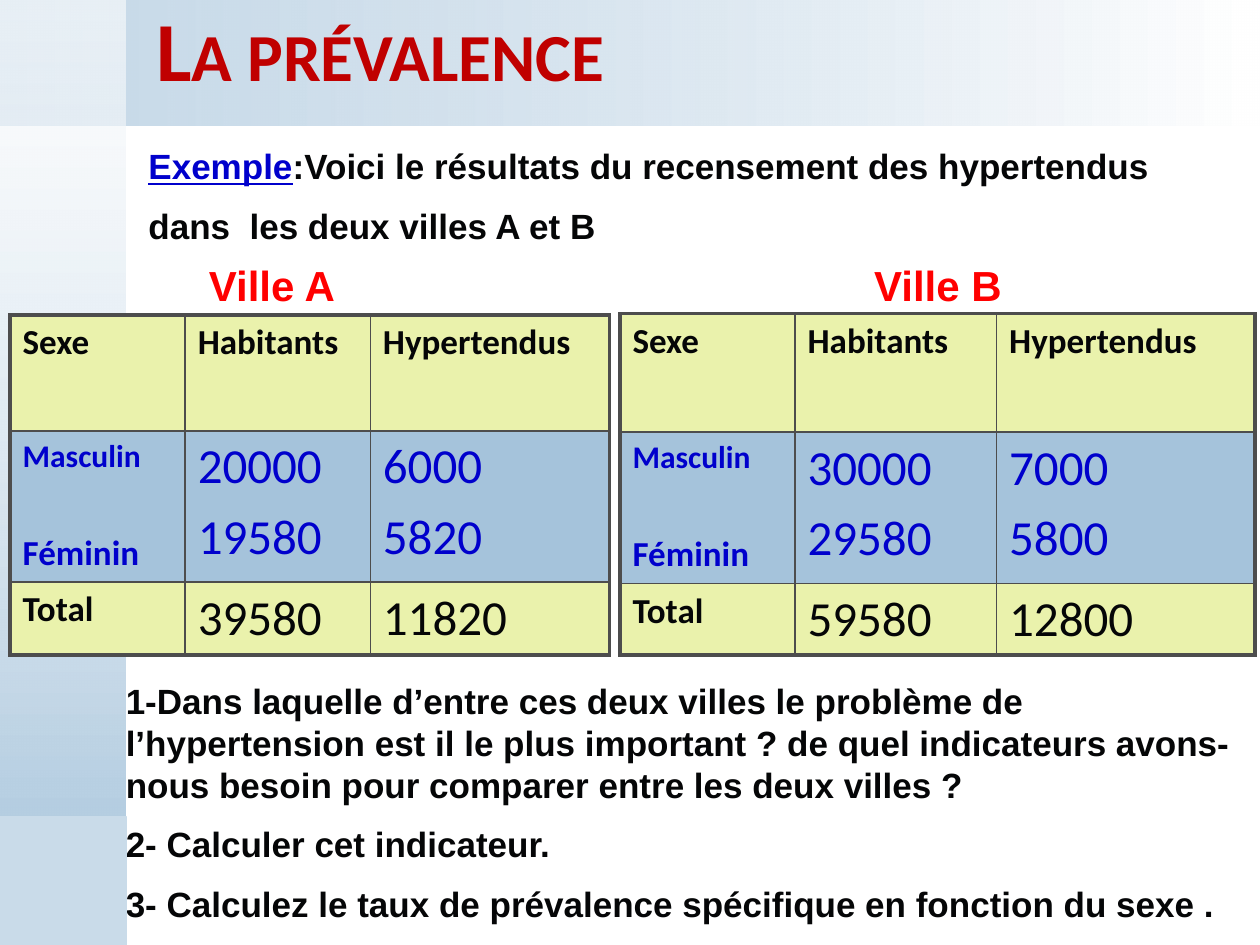
from dataclasses import dataclass

from lxml import etree
from pptx import Presentation
from pptx.dml.color import RGBColor
from pptx.enum.shapes import MSO_SHAPE
from pptx.enum.text import MSO_ANCHOR
from pptx.oxml.ns import qn
from pptx.util import Inches, Pt

RECT = MSO_SHAPE.RECTANGLE
MIDDLE = MSO_ANCHOR.MIDDLE
TOP = MSO_ANCHOR.TOP
BLANK = 6


@dataclass(frozen=True)
class Theme:
    """Colours, fonts and type sizes."""
    head: str = "Calibri"
    text: str = "Arial"
    ink: str = "050607"
    blue: str = "0000CC"
    red: str = "FF0000"
    dark: str = "C00000"
    sky: str = "A5C3DB"
    pale: str = "C9DBE9"
    lime: str = "EAF2AC"
    white: str = "FFFFFF"
    grid: str = "4D4D4D"
    title: int = 48
    figure: int = 28
    town: int = 24
    body: int = 20
    small: int = 18
    thin: float = 1
    thick: float = 2.25


T = Theme()


def rgb(code):
    """Turn a hex code into a colour."""
    return RGBColor.from_string(code)


def style(font, face, size, color, bold=True):
    """Set the look of a font."""
    font.name, font.size, font.bold = face, Pt(size), bold
    font.color.rgb = rgb(color)


def add_text(slide, box, lines, face, size, color, gap=0, anchor=TOP):
    """Add a text box with one paragraph per line."""
    frame = slide.shapes.add_textbox(*map(Inches, box)).text_frame
    frame.word_wrap = True
    frame.vertical_anchor = anchor
    for i, line in enumerate(lines):
        para = frame.paragraphs[0] if i == 0 else frame.add_paragraph()
        para.add_run().text = line
        if i:
            para.space_before = Pt(gap)
        style(para.font, face, size, color)
    return frame


def add_rect(slide, box):
    """Add a plain rectangle without shadow or outline."""
    shape = slide.shapes.add_shape(RECT, *map(Inches, box))
    shape.shadow.inherit = False
    shape.line.fill.background()
    return shape


def add_fade(slide, box, start, end, alpha, angle):
    """Add a band that fades from a see-through colour to a solid one."""
    fill = add_rect(slide, box).fill
    fill.gradient()
    fill.gradient_angle = angle
    for stop, color in zip(fill.gradient_stops, (start, end)):
        stop.color.rgb = rgb(color)
    tint = next(fill._xPr.iter(qn("a:srgbClr")))
    etree.SubElement(tint, qn("a:alpha"), val=str(alpha * 1000))


def set_edges(cell, row, col, last):
    """Draw the cell borders, thick on the outside of the table."""
    outer = {"L": col == 0, "R": col == last, "T": row == 0, "B": row == last}
    props = cell._tc.get_or_add_tcPr()
    for i, (side, edge) in enumerate(outer.items()):
        width = Pt(T.thick if edge else T.thin)
        line = etree.Element(qn(f"a:ln{side}"), w=str(width))
        fill = etree.SubElement(line, qn("a:solidFill"))
        etree.SubElement(fill, qn("a:srgbClr"), val=T.grid)
        props.insert(i, line)


def fill_cell(cell, row, col, text):
    """Write the lines of a cell and colour it by row and column."""
    mid = row == 1
    cell.fill.solid()
    cell.fill.fore_color.rgb = rgb(T.sky if mid else T.lime)
    label = row == 0 or col == 0
    cell.text = text
    for i, para in enumerate(cell.text_frame.paragraphs):
        size = T.body if label else T.figure
        if mid and label and i == 0:
            size = T.small
        if i:
            para.space_before = Pt(32 if label else 6)
        style(para.font, T.head, size, T.blue if mid else T.ink, label)


def add_grid(slide, left, top, cols, rows, data):
    """Add the census table of one town."""
    frame = slide.shapes.add_table(len(rows), len(cols), Inches(left), Inches(top),
                                   Inches(sum(cols)), Inches(sum(rows)))
    table = frame.table
    table.first_row = table.horz_banding = False
    for col, width in zip(table.columns, cols):
        col.width = Inches(width)
    for row, height in zip(table.rows, rows):
        row.height = Inches(height)
    for r, texts in enumerate(data):
        for c, text in enumerate(texts):
            cell = table.cell(r, c)
            fill_cell(cell, r, c, text)
            set_edges(cell, r, c, len(rows) - 1)


def census(people, cases):
    """Lay out the counts by sex with their totals."""
    cells = ["\n".join(map(str, counts)) for counts in (people, cases)]
    return [["Sexe", "Habitants", "Hypertendus"],
            ["Masculin\nFéminin", *cells],
            ["Total", str(sum(people)), str(sum(cases))]]


def add_intro(slide):
    """Add the example sentence with its underlined lead word."""
    lines = ["Exemple", "dans  les deux villes A et B"]
    frame = add_text(slide, (1.08, 1.1, 8.9, 0.9), lines,
                     T.text, T.body, T.ink, 10)
    para = frame.paragraphs[0]
    lead = para.runs[0].font
    lead.underline = True
    lead.color.rgb = rgb(T.blue)
    para.add_run().text = ":Voici le résultats du recensement des hypertendus"


def main():
    """Build the slide and save it."""
    deck = Presentation()
    deck.slide_width, deck.slide_height = Inches(10), Inches(7.5)
    slide = deck.slides.add_slide(deck.slide_layouts[BLANK])

    add_fade(slide, (0, 0, 10, 1), T.sky, T.white, 62, 0)
    add_fade(slide, (0, 0, 1, 7.5), T.white, T.sky, 59, 270)
    title = add_text(slide, (1.14, 0, 8.86, 0.76), ["La prévalence"],
                     T.head, T.title, T.dark, anchor=MIDDLE)
    title.paragraphs[0].runs[0]._r.get_or_add_rPr().set("cap", "small")
    add_intro(slide)

    add_grid(slide, 0.08, 2.5, (1.39, 1.47, 1.9), (0.92, 1.2, 0.58),
             census((20000, 19580), (6000, 5820)))
    add_grid(slide, 4.92, 2.49, (1.39, 1.6, 2.05), (0.94, 1.2, 0.57),
             census((30000, 29580), (7000, 5800)))

    tasks = [
        "1-Dans laquelle d’entre ces deux villes le problème de l’hypertension "
        "est il le plus important ? de quel indicateurs avons-nous besoin pour "
        "comparer entre les deux villes ?",
        "2- Calculer cet indicateur.",
        "3- Calculez le taux de prévalence spécifique en fonction du sexe .",
    ]
    add_text(slide, (0.9, 5.34, 9.1, 2.1), tasks, T.text, T.body, T.ink, 10)
    for name, left in (("Ville B", 6.84), ("Ville A", 1.56)):
        add_text(slide, (left, 2.01, 2, 0.51), [name], T.text, T.town, T.red)

    block = add_rect(slide, (0, 6.48, 1, 1.02))
    block.fill.solid()
    block.fill.fore_color.rgb = block.line.color.rgb = rgb(T.pale)
    block.line.width = Pt(0.75)
    deck.save("out.pptx")


if __name__ == "__main__":
    main()
